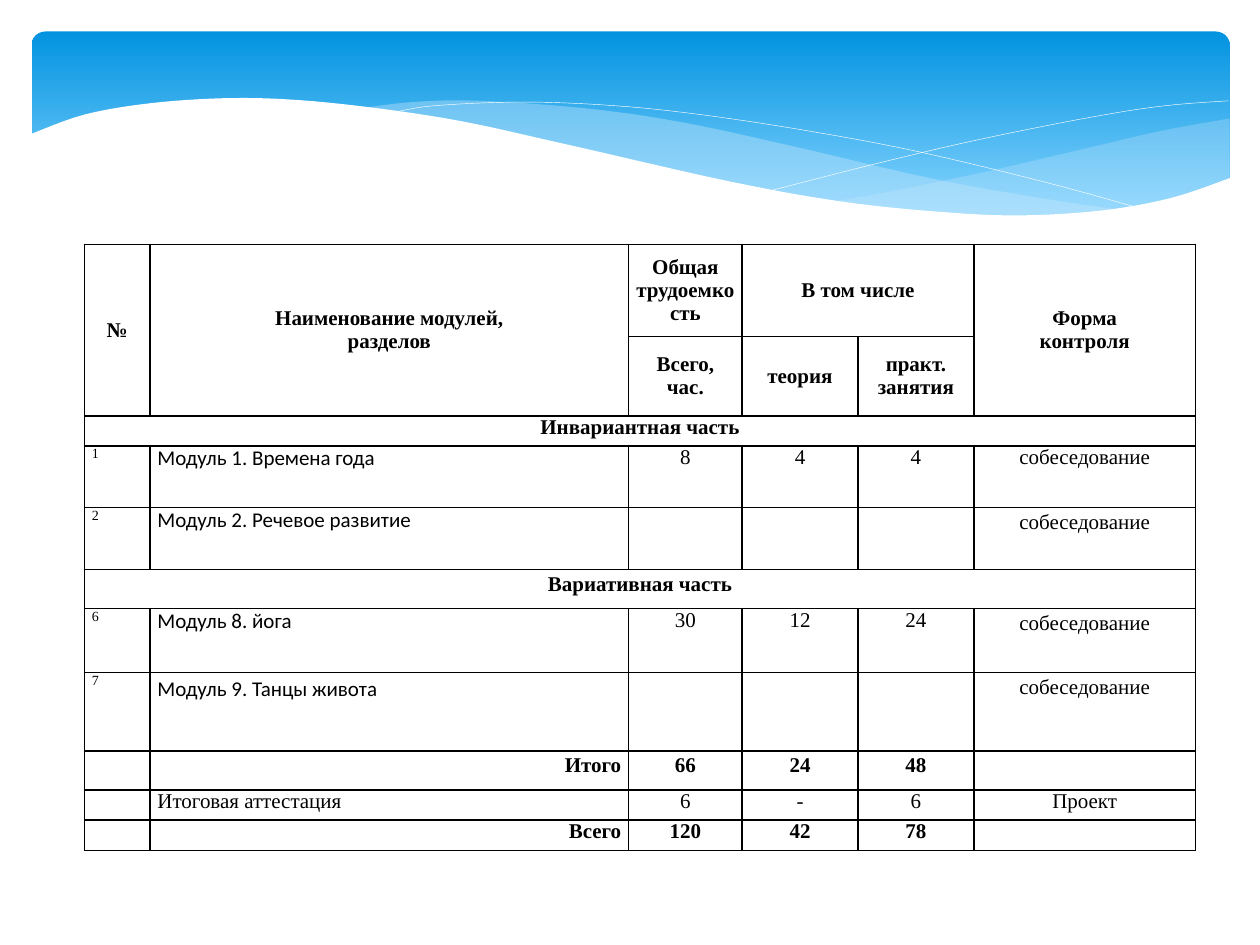
"""Build a slide with a wave banner and a table of course modules."""
from lxml import etree
from pptx import Presentation
from pptx.dml.color import RGBColor
from pptx.enum.shapes import MSO_SHAPE
from pptx.enum.text import MSO_ANCHOR, PP_ALIGN
from pptx.oxml.ns import qn
from pptx.util import Inches, Pt

ROUNDED = MSO_SHAPE.ROUNDED_RECTANGLE
MIDDLE, TOP = MSO_ANCHOR.MIDDLE, MSO_ANCHOR.TOP
LEFT, CENTER, RIGHT, JUSTIFY = PP_ALIGN.LEFT, PP_ALIGN.CENTER, PP_ALIGN.RIGHT, PP_ALIGN.JUSTIFY
BLACK = RGBColor(0x00, 0x00, 0x00)
WHITE = RGBColor(0xFF, 0xFF, 0xFF)
DEEP_BLUE = RGBColor(0x02, 0x93, 0xE0)
SKY_BLUE = RGBColor(0x83, 0xD3, 0xFE)
PALE_BLUE = RGBColor(0xC6, 0xE7, 0xFC)


def smooth(knots, steps=6):
    """Return points of a Catmull-Rom curve through the knots."""
    padded = [knots[0], *knots, knots[-1]]
    points = [knots[0]]
    for a, b, c, d in zip(padded, padded[1:], padded[2:], padded[3:]):
        for step in range(1, steps + 1):
            t = step / steps
            points.append(tuple(
                (2 * q + (r - p) * t + (2 * p - 5 * q + 4 * r - s) * t ** 2
                 + (3 * q - p - 3 * r + s) * t ** 3) / 2
                for p, q, r, s in zip(a, b, c, d)))
    return points


def add_wave(slide, points, fill=None, opacity=100):
    """Add a filled wave, or a thin white curve when there is no fill."""
    (x, y), *rest = [(Inches(x), Inches(y)) for x, y in points]
    builder = slide.shapes.build_freeform(x, y)
    builder.add_line_segments(rest, close=fill is not None)
    shape = builder.convert_to_shape()
    shape.shadow.inherit = False
    if fill is None:
        shape.fill.background()
        shape.line.color.rgb = WHITE
        shape.line.width = Pt(0.25)
        return
    shape.fill.solid()
    shape.fill.fore_color.rgb = fill
    shape.line.fill.background()
    if opacity < 100:
        color = shape._element.spPr.find(qn("a:solidFill"))[0]
        etree.SubElement(color, qn("a:alpha"), val=str(opacity * 1000))


presentation = Presentation()
presentation.slide_width = Inches(10)
presentation.slide_height = Inches(7.5)
slide = presentation.slides.add_slide(presentation.slide_layouts[6])

banner = slide.shapes.add_shape(ROUNDED, Inches(0.25), Inches(0.25), Inches(9.51), Inches(1.56))
banner.adjustments[0] = 0.071
banner.shadow.inherit = False
banner.line.fill.background()
banner.fill.gradient()
banner.fill.gradient_angle = 270
for stop, color, position in zip(banner.fill.gradient_stops, (DEEP_BLUE, SKY_BLUE), (0, 0.9)):
    stop.color.rgb = color
    stop.position = position

right_wave = smooth([(9.76, 0.94), (9.21, 1.04), (8.61, 1.18), (7.79, 1.37), (7.06, 1.52), (6.61, 1.6)])
right_wave += smooth([(6.61, 1.6), (7.19, 1.67), (7.81, 1.72), (8.35, 1.72), (8.81, 1.67),
                      (9.28, 1.58), (9.76, 1.41)])
middle_wave = smooth([(8.93, 1.67), (8.37, 1.59), (7.41, 1.42), (6.29, 1.16), (5.41, 0.97),
                      (4.65, 0.86), (3.8, 0.8), (3.28, 0.81), (2.86, 0.86)])
middle_wave += smooth([(2.86, 0.86), (3.62, 0.97), (4.49, 1.16), (5.66, 1.43), (6.5, 1.58),
                       (7.22, 1.68), (7.85, 1.72), (8.38, 1.72), (8.93, 1.67)])
falling_curve = smooth([(3.09, 0.9), (3.44, 0.84), (4.16, 0.81), (4.89, 0.84), (5.56, 0.91),
                        (6.36, 1.03), (7.27, 1.2), (8.31, 1.45), (9.07, 1.66)])
rising_curve = smooth([(6.13, 1.51), (6.95, 1.3), (7.76, 1.11), (8.66, 0.93), (9.24, 0.84), (9.75, 0.8)])
white_wave = smooth([(9.77, 1.41), (9.3, 1.57), (8.75, 1.67), (8.09, 1.71), (7.44, 1.68),
                     (6.68, 1.6), (5.79, 1.44), (4.47, 1.14), (3.65, 0.96), (2.92, 0.85),
                     (2.3, 0.79), (1.77, 0.78), (1.19, 0.82), (0.67, 0.91), (0.23, 1.07)])
white_wave += [(0.23, 2.24), (9.77, 2.24)]

add_wave(slide, right_wave, PALE_BLUE, 29)
add_wave(slide, middle_wave, PALE_BLUE, 40)
add_wave(slide, falling_curve)
add_wave(slide, rising_curve)
add_wave(slide, white_wave, WHITE)

rows = [
    ["№", "Наименование модулей,\nразделов", "Общая трудоемкость", "В том числе", "", "Форма\nконтроля"],
    ["", "", "Всего,\nчас.", "теория", "практ. занятия", ""],
    ["Инвариантная часть", "", "", "", "", ""],
    ["1", "Модуль 1. Времена года", "8", "4", "4", "собеседование"],
    ["2", "Модуль 2. Речевое развитие", "", "", "", "собеседование"],
    ["Вариативная часть", "", "", "", "", ""],
    ["6", "Модуль 8. йога", "30", "12", "24", "собеседование"],
    ["7", "Модуль 9. Танцы живота", "", "", "", "собеседование"],
    ["", "Итого", "66", "24", "48", ""],
    ["", "Итоговая аттестация", "6", "-", "6", "Проект"],
    ["", "Всего", "120", "42", "78", ""],
]
column_widths = [0.52, 3.8, 0.9, 0.92, 0.92, 1.76]
row_heights = [0.73, 0.63, 0.24, 0.49, 0.49, 0.31, 0.51, 0.62, 0.31, 0.24, 0.24]
header_rows, section_rows, module_rows, total_rows = (0, 1), (2, 5), (3, 4, 6, 7), (8, 10)
bold_rows = header_rows + section_rows + total_rows
loose_rows = (5, 8)
loose_cells = [(4, 5), (6, 5), (7, 1), (7, 5)]
merges = [((0, 0), (1, 0)), ((0, 1), (1, 1)), ((0, 3), (0, 4)), ((0, 5), (1, 5)),
          ((2, 0), (2, 5)), ((5, 0), (5, 5))]

table = slide.shapes.add_table(len(rows), len(column_widths), Inches(0.67), Inches(1.94),
                               Inches(8.82), Inches(4.8)).table
table.first_row = False
table.horz_banding = False
for column, width in zip(table.columns, column_widths):
    column.width = Inches(width)
for row, height in zip(table.rows, row_heights):
    row.height = Inches(height)

for row_index, texts in enumerate(rows):
    for column_index, text in enumerate(texts):
        cell = table.cell(row_index, column_index)
        cell.margin_left = cell.margin_right = Inches(0.06)
        cell.margin_top = cell.margin_bottom = 0
        cell.vertical_anchor = MIDDLE if row_index in header_rows else TOP
        properties = cell._tc.get_or_add_tcPr()
        for side in ("lnL", "lnR", "lnT", "lnB"):
            border = etree.SubElement(properties, qn(f"a:{side}"), w=str(Pt(1)))
            border_fill = etree.SubElement(border, qn("a:solidFill"))
            etree.SubElement(border_fill, qn("a:srgbClr"), val=str(BLACK))
        cell.fill.solid()
        cell.fill.fore_color.rgb = WHITE

        is_module = row_index in module_rows
        alignment = CENTER
        if is_module and column_index == 0:
            alignment = LEFT
        elif column_index == 1 and row_index in total_rows:
            alignment = RIGHT
        elif column_index == 1 and row_index not in header_rows:
            alignment = JUSTIFY
        for line_index, line in enumerate(text.split("\n")):
            frame = cell.text_frame
            paragraph = frame.add_paragraph() if line_index else frame.paragraphs[0]
            paragraph.alignment = alignment
            if row_index in loose_rows or (row_index, column_index) in loose_cells:
                paragraph.line_spacing = 1.15
            if not line:
                paragraph._p.get_or_add_endParaRPr().set("sz", "1200")
                continue
            run = paragraph.add_run()
            run.text = line
            run.font.name = "Calibri" if is_module and column_index == 1 else "Times New Roman"
            run.font.size = Pt(8 if is_module and column_index == 0 else 12)
            run.font.bold = row_index in bold_rows
            run.font.color.rgb = BLACK

for first, last in merges:
    table.cell(*first).merge(table.cell(*last))

presentation.save("out.pptx")
